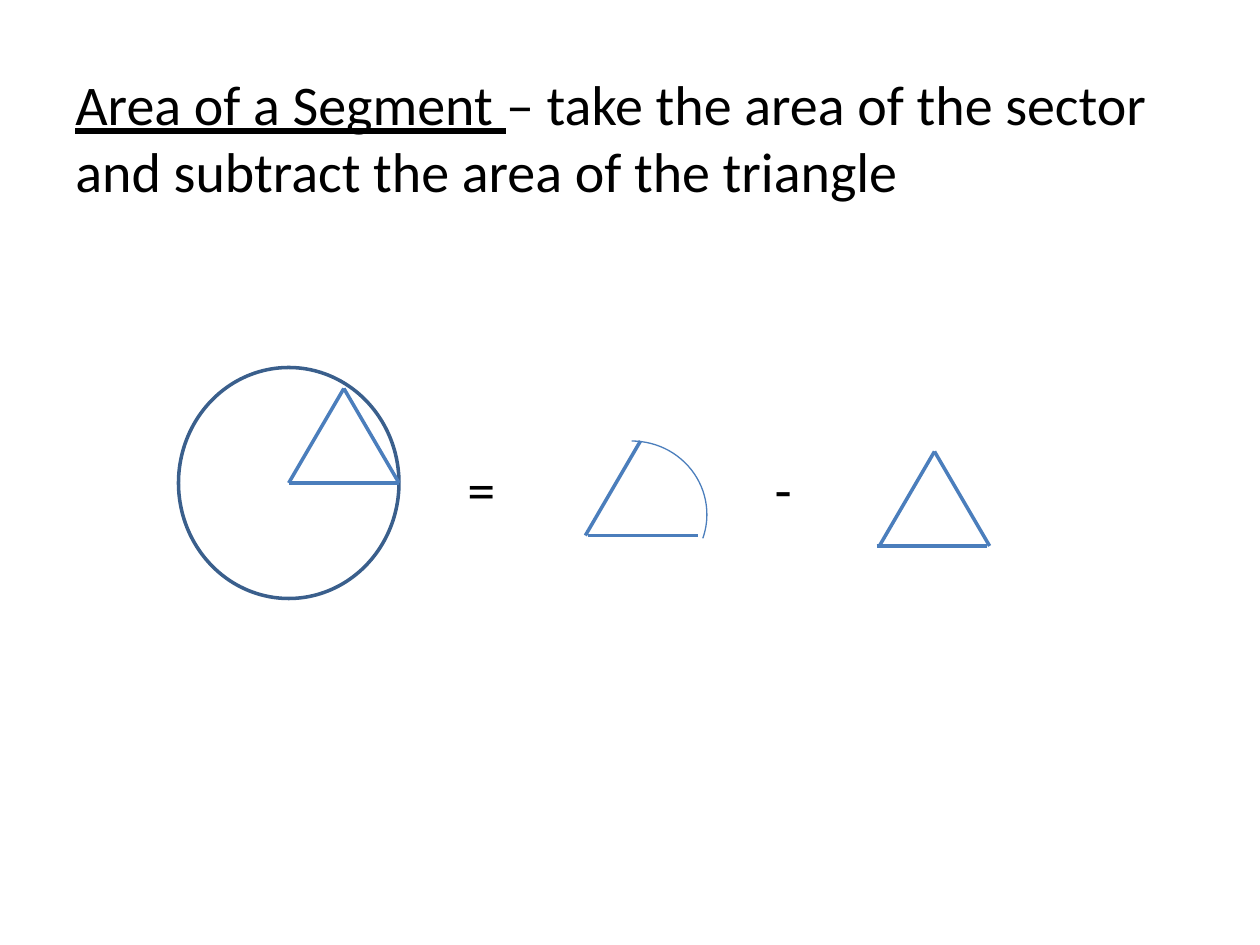
from lxml.etree import SubElement
from pptx import Presentation
from pptx.dml.color import RGBColor
from pptx.enum.shapes import MSO_CONNECTOR, MSO_SHAPE
from pptx.enum.text import PP_ALIGN
from pptx.oxml.ns import qn
from pptx.util import Pt

BLACK = RGBColor(0x00, 0x00, 0x00)
CIRCLE_BLUE = RGBColor(0x3A, 0x5F, 0x8C)
LINE_BLUE = RGBColor(0x4B, 0x7E, 0xBC)

# Every triangle has the same base and height, in points
BASE, HEIGHT = 63, 54


def add_text(page, left, top, width, height, parts, align=PP_ALIGN.LEFT):
    """Add one paragraph made of (text, underlined) parts."""
    box = page.shapes.add_textbox(Pt(left), Pt(top), Pt(width), Pt(height))
    box.text_frame.word_wrap = True
    para = box.text_frame.paragraphs[0]
    para.alignment = align
    for text, underlined in parts:
        span = para.add_run()
        span.text = text
        span.font.name = "Calibri"
        span.font.size = Pt(32)
        span.font.color.rgb = BLACK
        span.font.underline = underlined
    return para


def add_line(page, start, end):
    line = page.shapes.add_connector(
        MSO_CONNECTOR.STRAIGHT, *(Pt(value) for value in (*start, *end)))
    line.line.color.rgb = LINE_BLUE
    line.line.width = Pt(2)
    SubElement(line._element.spPr, qn("a:effectLst"))


def add_outline(page, kind, left, top, width, height, color, weight):
    shape = page.shapes.add_shape(kind, Pt(left), Pt(top), Pt(width), Pt(height))
    shape.shadow.inherit = False
    shape.fill.background()
    shape.line.color.rgb = color
    shape.line.width = Pt(weight)
    return shape


def add_radii(page, left, bottom, base_shift=0):
    """Draw the base and the left side that meet at the lower left."""
    add_line(page, (left + base_shift, bottom), (left + base_shift + BASE, bottom))
    add_line(page, (left, bottom), (left + BASE / 2, bottom - HEIGHT))


def add_triangle(page, left, bottom, base_shift=0):
    add_radii(page, left, bottom, base_shift)
    add_line(page, (left + BASE / 2, bottom - HEIGHT), (left + BASE, bottom))


def add_circle_with_segment(page, left, top, width, height):
    add_outline(page, MSO_SHAPE.OVAL, left, top, width, height, CIRCLE_BLUE, 2)
    add_triangle(page, left + width / 2, top + height / 2)


def add_sector(page, left, bottom):
    add_radii(page, left, bottom, 1.5)
    arc = add_outline(page, MSO_SHAPE.ARC, left - 16.5, bottom - HEIGHT,
                      86, 84, LINE_BLUE, 0.75)
    arc.adjustments[0] = 162
    arc.adjustments[1] = 11.09


def add_operator(page, center, top, symbol):
    add_text(page, center - 20, top, 40, 46, [(symbol, False)], PP_ALIGN.CENTER)


def main():
    deck = Presentation()
    deck.slide_width, deck.slide_height = Pt(720), Pt(540)
    page = deck.slides.add_slide(deck.slide_layouts[6])

    # Statement of the rule
    statement = add_text(page, 36, 36, 648, 90, [
        ("Area of a Segment ", True),
        ("– take the area of the sector and subtract the area of the triangle", False),
    ])
    statement.space_before = Pt(2)

    # Picture equation: segment = sector - triangle
    add_circle_with_segment(page, 102, 210, 126, 132)
    add_operator(page, 275, 256, "=")
    add_sector(page, 334.5, 306)
    add_operator(page, 447.5, 256, "-")
    add_triangle(page, 502.5, 312, -1.5)

    deck.save("out.pptx")


if __name__ == "__main__":
    main()
